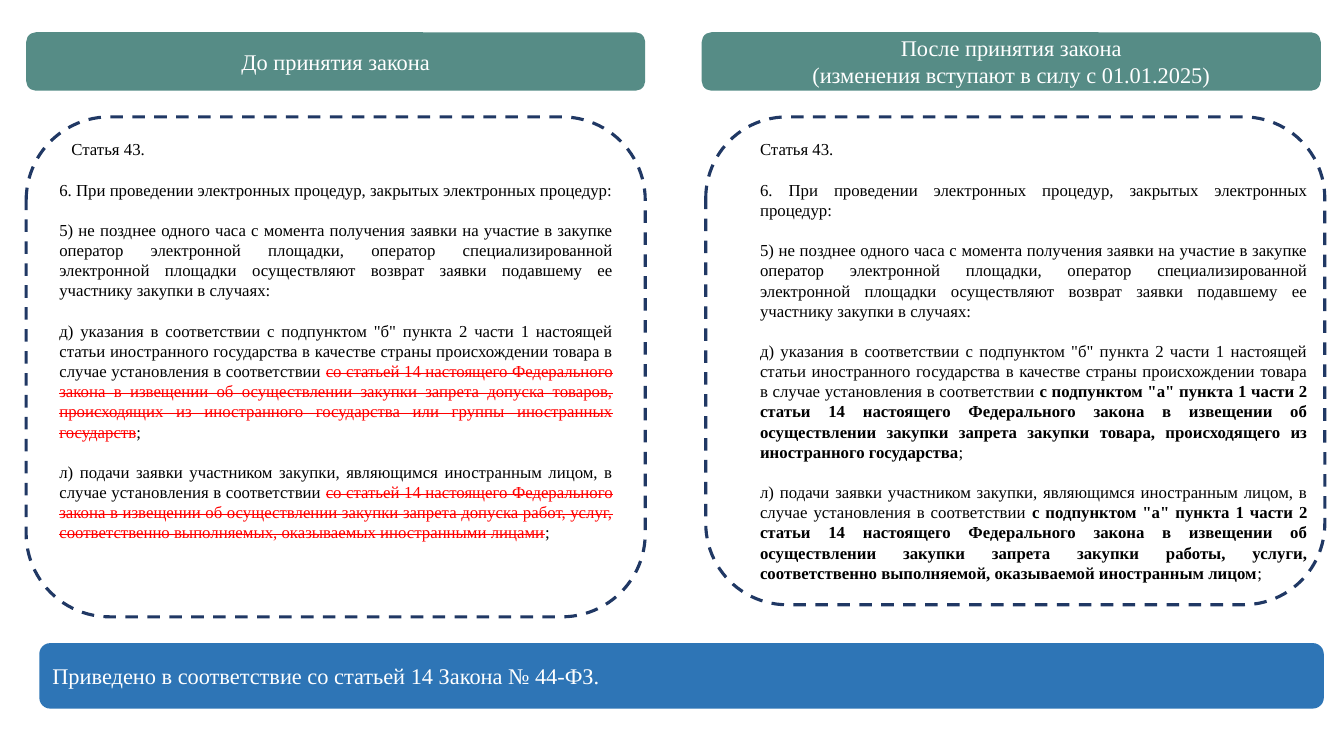
"""Build a slide comparing a law's wording before and after its amendment."""
import dataclasses

import pptx
import pptx.dml.color
import pptx.enum.dml
import pptx.enum.shapes
import pptx.enum.text
import pptx.util

Inches = pptx.util.Inches
Align = pptx.enum.text.PP_ALIGN


@dataclasses.dataclass(frozen=True)
class Theme:
    font: str = "Times New Roman"
    header: str = "568C86"
    footer: str = "2E75B6"
    outline: str = "203864"
    light: str = "FFFFFF"
    dark: str = "000000"
    removed: str = "FF0000"
    heading_size: float = 16
    body_size: float = 12
    paragraph_gap: float = 14.4
    outline_width: float = 2.25


THEME = Theme()

ARTICLE = "Статья 43."
INTRO = [
    "6. При проведении электронных процедур, закрытых электронных процедур:",
    "5) не позднее одного часа с момента получения заявки на участие в закупке "
    "оператор электронной площадки, оператор специализированной электронной площадки "
    "осуществляют возврат заявки подавшему ее участнику закупки в случаях:",
]
CLAUSES = [
    "д) указания в соответствии с подпунктом \"б\" пункта 2 части 1 настоящей статьи "
    "иностранного государства в качестве страны происхождении товара в случае "
    "установления в соответствии ",
    "л) подачи заявки участником закупки, являющимся иностранным лицом, в случае "
    "установления в соответствии ",
]
BAN = "статьей 14 настоящего Федерального закона в извещении об осуществлении закупки запрета допуска "
OLD_WORDING = [
    "со " + BAN + "товаров, происходящих из иностранного государства или группы "
    "иностранных государств",
    "со " + BAN + "работ, услуг, соответственно выполняемых, оказываемых "
    "иностранными лицами",
]
NEW_BAN = (
    "с подпунктом \"а\" пункта 1 части 2 статьи 14 настоящего Федерального закона "
    "в извещении об осуществлении закупки запрета закупки "
)
NEW_WORDING = [
    NEW_BAN + "товара, происходящего из иностранного государства",
    NEW_BAN + "работы, услуги, соответственно выполняемой, оказываемой иностранным лицом",
]


def rgb(code):
    return pptx.dml.color.RGBColor.from_string(code)


def add_span(para, text, size=THEME.body_size, color=THEME.dark, bold=False, strike=False):
    span = para.add_run()
    span.text = text
    span.font.name = THEME.font
    span.font.size = pptx.util.Pt(size)
    span.font.bold = bold
    span.font.color.rgb = rgb(color)
    if strike:
        span.font._element.set("strike", "sngStrike")


def add_round_box(page, left, top, width, height):
    box = page.shapes.add_shape(
        pptx.enum.shapes.MSO_SHAPE.ROUNDED_RECTANGLE,
        Inches(left), Inches(top), Inches(width), Inches(height),
    )
    box.shadow.inherit = False
    return box


def add_banner(page, place, lines, fill, align):
    box = add_round_box(page, *place)
    box.fill.solid()
    box.fill.fore_color.rgb = rgb(fill)
    box.line.fill.background()
    frame = box.text_frame
    frame.word_wrap = True
    frame.vertical_anchor = pptx.enum.text.MSO_ANCHOR.MIDDLE
    for number, line in enumerate(lines):
        para = frame.add_paragraph() if number else frame.paragraphs[0]
        para.alignment = align
        add_span(para, line, size=THEME.heading_size, color=THEME.light)


def add_dashed_frame(page, *place):
    box = add_round_box(page, *place)
    box.fill.background()
    box.line.color.rgb = rgb(THEME.outline)
    box.line.width = pptx.util.Pt(THEME.outline_width)
    box.line.dash_style = pptx.enum.dml.MSO_LINE.DASH


def add_article(page, place, wording, indent=0, **emphasis):
    box = page.shapes.add_textbox(*(Inches(value) for value in place))
    frame = box.text_frame
    frame.word_wrap = True
    frame.margin_top = Inches(0.25)
    paragraphs = [[(text, {})] for text in [ARTICLE, *INTRO]]
    for clause, change in zip(CLAUSES, wording):
        paragraphs.append([(clause, {}), (change, emphasis), (";", {})])
    for number, spans in enumerate(paragraphs):
        para = frame.add_paragraph() if number else frame.paragraphs[0]
        para.alignment = Align.JUSTIFY
        if number < len(paragraphs) - 1:
            para.space_after = pptx.util.Pt(THEME.paragraph_gap)
        for text, style in spans:
            add_span(para, text, **style)
    if indent:
        frame.paragraphs[0]._p.get_or_add_pPr().set("indent", str(Inches(indent)))


def main():
    deck = pptx.Presentation()
    deck.slide_width, deck.slide_height = Inches(13.33), Inches(7.5)
    page = deck.slides.add_slide(deck.slide_layouts[6])

    add_banner(page, (0.26, 0.32, 6.14, 0.58), ["До принятия закона"],
               THEME.header, Align.CENTER)
    add_banner(page, (6.96, 0.32, 6.14, 0.58),
               ["После принятия закона", "(изменения вступают в силу с 01.01.2025)"],
               THEME.header, Align.CENTER)
    add_dashed_frame(page, 0.26, 1.16, 6.14, 4.96)
    add_dashed_frame(page, 7, 1.16, 6.14, 4.84)
    add_banner(page, (0.39, 6.38, 12.74, 0.65),
               ["Приведено в соответствие со статьей 14 Закона № 44-ФЗ."],
               THEME.footer, Align.LEFT)
    add_article(page, (7.44, 1.13, 5.63, 5.35), NEW_WORDING, bold=True)
    add_article(page, (0.49, 1.13, 5.69, 4.54), OLD_WORDING, indent=0.12,
                color=THEME.removed, strike=True)

    deck.save("out.pptx")


if __name__ == "__main__":
    main()
